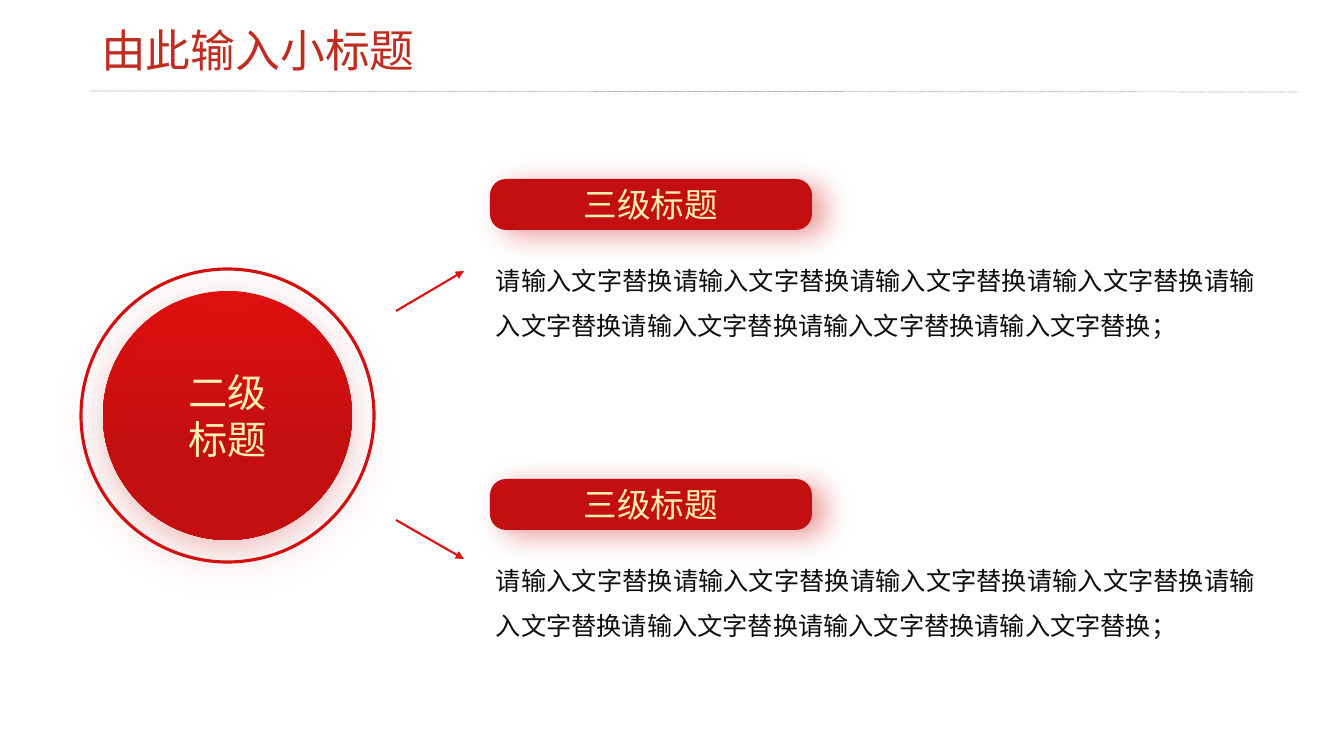
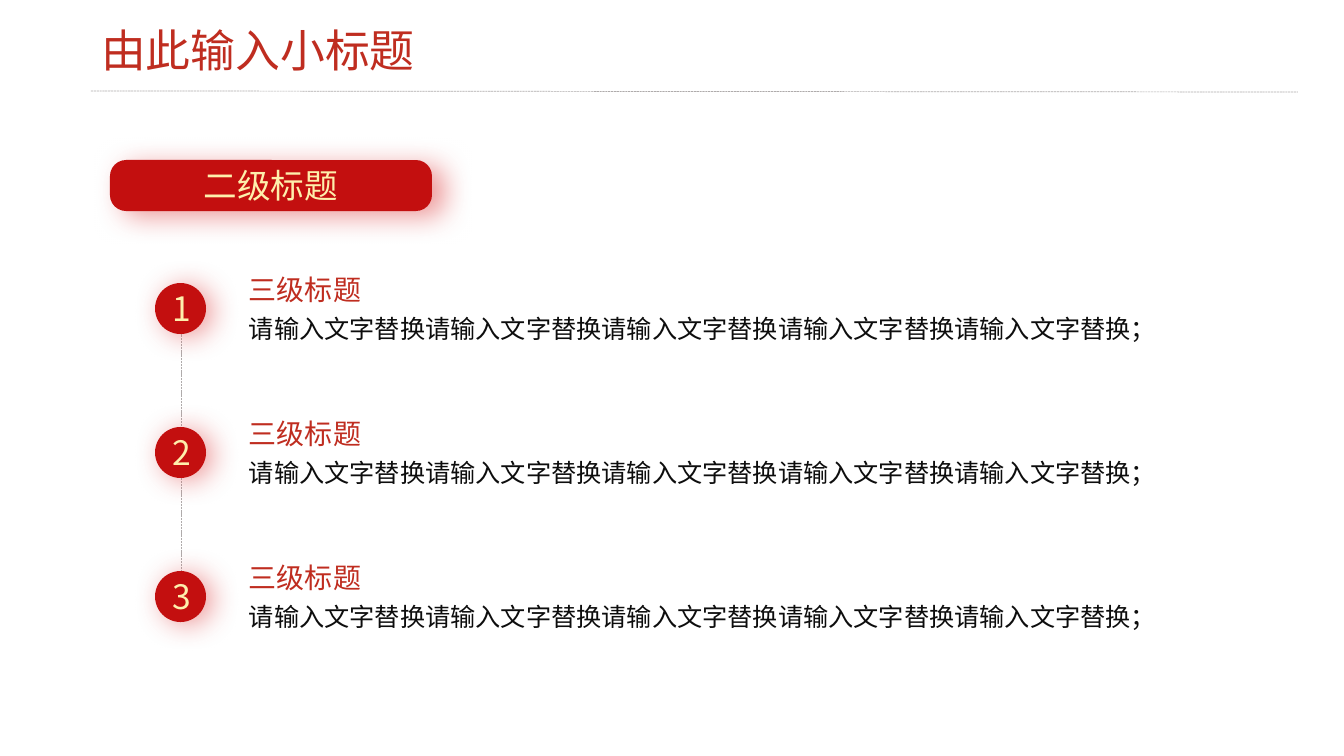
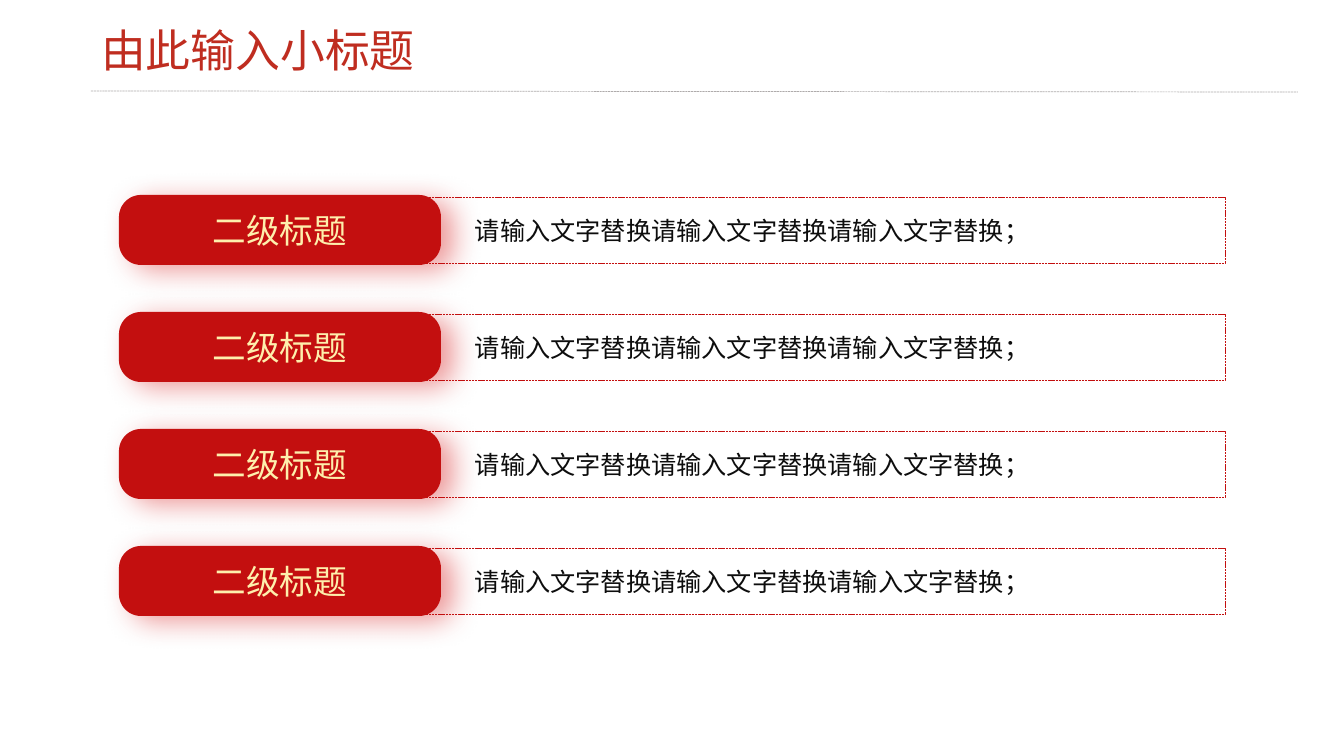
"""Build three red-and-gold Chinese content slides: branches, timeline and list."""
from dataclasses import dataclass

from lxml.etree import SubElement
from pptx import Presentation
from pptx.dml.color import RGBColor
from pptx.enum.dml import MSO_LINE
from pptx.enum.shapes import MSO_CONNECTOR, MSO_SHAPE
from pptx.enum.text import MSO_ANCHOR, MSO_AUTO_SIZE, PP_ALIGN
from pptx.oxml.ns import qn
from pptx.util import Pt

PX = 9071


@dataclass(frozen=True)
class Theme:
    font: str = "Noto Sans CJK SC"
    red: str = "C30F0F"
    bright_red: str = "DF1111"
    ring_red: str = "D21010"
    arrow_red: str = "DB1111"
    title_red: str = "BF2D20"
    gold: str = "FEEFAC"
    ink: str = "0D0D0D"
    grey: str = "AFABAB"
    title_size: int = 32
    circle_size: int = 28
    label_size: int = 24
    heading_size: int = 20
    body_size: int = 18
    circle_shadow: tuple = ("C30F0F", 23, 20, 8, 90)
    pill_shadow: tuple = ("DF4849", 55, 20, 10, 25)
    badge_shadow: tuple = ("DF4849", 55, 20, 5, 25)


theme = Theme()


def write(shape, text, size=theme.body_size, color=theme.ink,
          align=PP_ALIGN.JUSTIFY, anchor=MSO_ANCHOR.TOP, spacing=None):
    frame = shape.text_frame
    frame.text = text
    frame.word_wrap = True
    frame.vertical_anchor = anchor
    if anchor == MSO_ANCHOR.TOP:
        frame.auto_size = MSO_AUTO_SIZE.SHAPE_TO_FIT_TEXT
    for paragraph in frame.paragraphs:
        paragraph.alignment = align
        paragraph.line_spacing = spacing
        for run in paragraph.runs:
            run.font.size = Pt(size)
            run.font.color.rgb = RGBColor.from_string(color)
            run.font.name = theme.font
    for properties in shape.element.iter(qn("a:rPr")):
        SubElement(properties, qn("a:ea"), typeface=theme.font)


def draw(slide, kind, box, fill=None, outline=None, shadow=None, corner=None,
         label=None, label_size=theme.label_size):
    shape = slide.shapes.add_shape(kind, *(value * PX for value in box))
    if fill:
        shape.fill.solid()
        shape.fill.fore_color.rgb = RGBColor.from_string(fill)
    else:
        shape.fill.background()
    if outline:
        color, width, dash = outline
        shape.line.color.rgb = RGBColor.from_string(color)
        shape.line.width = Pt(width)
        shape.line.dash_style = dash
    else:
        shape.line.fill.background()
    if corner:
        shape.adjustments[0] = corner
    shape.shadow.inherit = False
    if shadow:
        color, opacity, blur, distance, angle = shadow
        effects = shape.element.spPr.find(qn("a:effectLst"))
        outer = SubElement(effects, qn("a:outerShdw"), blurRad=str(Pt(blur)),
                           dist=str(Pt(distance)), dir=str(angle * 60000),
                           algn="ctr", rotWithShape="0")
        tint = SubElement(outer, qn("a:srgbClr"), val=color)
        SubElement(tint, qn("a:alpha"), val=str(opacity * 1000))
    if label:
        write(shape, label, size=label_size, color=theme.gold,
              align=PP_ALIGN.CENTER, anchor=MSO_ANCHOR.MIDDLE)
    return shape


presentation = Presentation()
presentation.slide_width = 1344 * PX
presentation.slide_height = 756 * PX
layout = presentation.slide_layouts[5]
branches, timeline, listing = [presentation.slides.add_slide(layout) for _ in range(3)]

for slide in (branches, timeline, listing):
    title = slide.shapes.title
    title.left, title.top, title.width, title.height = (
        value * PX for value in (91, 18, 360, 65))
    write(title, "由此输入小标题", size=theme.title_size, color=theme.title_red,
          align=PP_ALIGN.LEFT)

lines = (
    (branches, (91, 91, 1298, 92), theme.grey, 0.5, "rule"),
    (branches, (396, 311, 464, 271), theme.arrow_red, 1.5, "arrow"),
    (branches, (396, 520, 464, 559), theme.arrow_red, 1.5, "arrow"),
    (timeline, (181, 301, 181, 603), theme.grey, 0.5, "rail"),
)
for slide, ends, color, width, role in lines:
    connector = slide.shapes.add_connector(
        MSO_CONNECTOR.STRAIGHT, *(value * PX for value in ends))
    connector.line.color.rgb = RGBColor.from_string(color)
    connector.line.width = Pt(width)
    properties = connector.element.spPr
    if role == "arrow":
        SubElement(properties.find(qn("a:ln")), qn("a:tailEnd"), type="triangle")
    else:
        connector.line.dash_style = MSO_LINE.SQUARE_DOT
    SubElement(properties, qn("a:effectLst"))
    if role == "rule":
        layout.shapes.element.append(connector.element)

circle = draw(branches, MSO_SHAPE.OVAL, (103, 291, 249, 249), fill=theme.red,
              shadow=theme.circle_shadow, label="二级\n标题",
              label_size=theme.circle_size)
circle.fill.gradient()
circle.fill.gradient_angle = 270
for stop, color, position in zip(circle.fill.gradient_stops,
                                 (theme.bright_red, theme.red), (0, 0.64)):
    stop.color.rgb = RGBColor.from_string(color)
    stop.position = position
draw(branches, MSO_SHAPE.OVAL, (81, 269, 293, 293),
     outline=(theme.ring_red, 2.25, MSO_LINE.SOLID), shadow=theme.circle_shadow)

phrase = "请输入文字替换"
for row in range(2):
    top = 179 + row * 300
    draw(branches, MSO_SHAPE.ROUNDED_RECTANGLE, (490, top, 322, 51), fill=theme.red,
         shadow=theme.pill_shadow, corner=0.315, label="三级标题")
    body = branches.shapes.add_textbox(486 * PX, (top + 66) * PX, 779 * PX, 97 * PX)
    write(body, phrase * 8 + "；", spacing=1.5)

draw(timeline, MSO_SHAPE.ROUNDED_RECTANGLE, (110, 160, 322, 51), fill=theme.red,
     shadow=theme.pill_shadow, corner=0.315, label="二级标题")
for row in range(3):
    top = 283 + row * 144
    draw(timeline, MSO_SHAPE.ROUNDED_RECTANGLE, (155, top, 51, 51), fill=theme.red,
         shadow=theme.badge_shadow, corner=0.5, label=str(row + 1))
    body = timeline.shapes.add_textbox(239 * PX, (top + 25) * PX, 934 * PX, 40 * PX)
    write(body, phrase * 5 + "；")
    heading = timeline.shapes.add_textbox(239 * PX, (top - 15) * PX, 203 * PX, 44 * PX)
    write(heading, "三级标题", size=theme.heading_size, color=theme.title_red)

for row in range(4):
    top = 195 + row * 117
    draw(listing, MSO_SHAPE.ROUNDED_RECTANGLE, (119, top, 322, 70), fill=theme.red,
         shadow=theme.pill_shadow, corner=0.315, label="二级标题")
    draw(listing, MSO_SHAPE.RECTANGLE, (203, top + 2, 1022, 66),
         outline=(theme.red, 0.5, MSO_LINE.SQUARE_DOT))
    body = listing.shapes.add_textbox(465 * PX, (top + 15) * PX, 672 * PX, 40 * PX)
    write(body, phrase * 3 + "；")

presentation.save("out.pptx")
